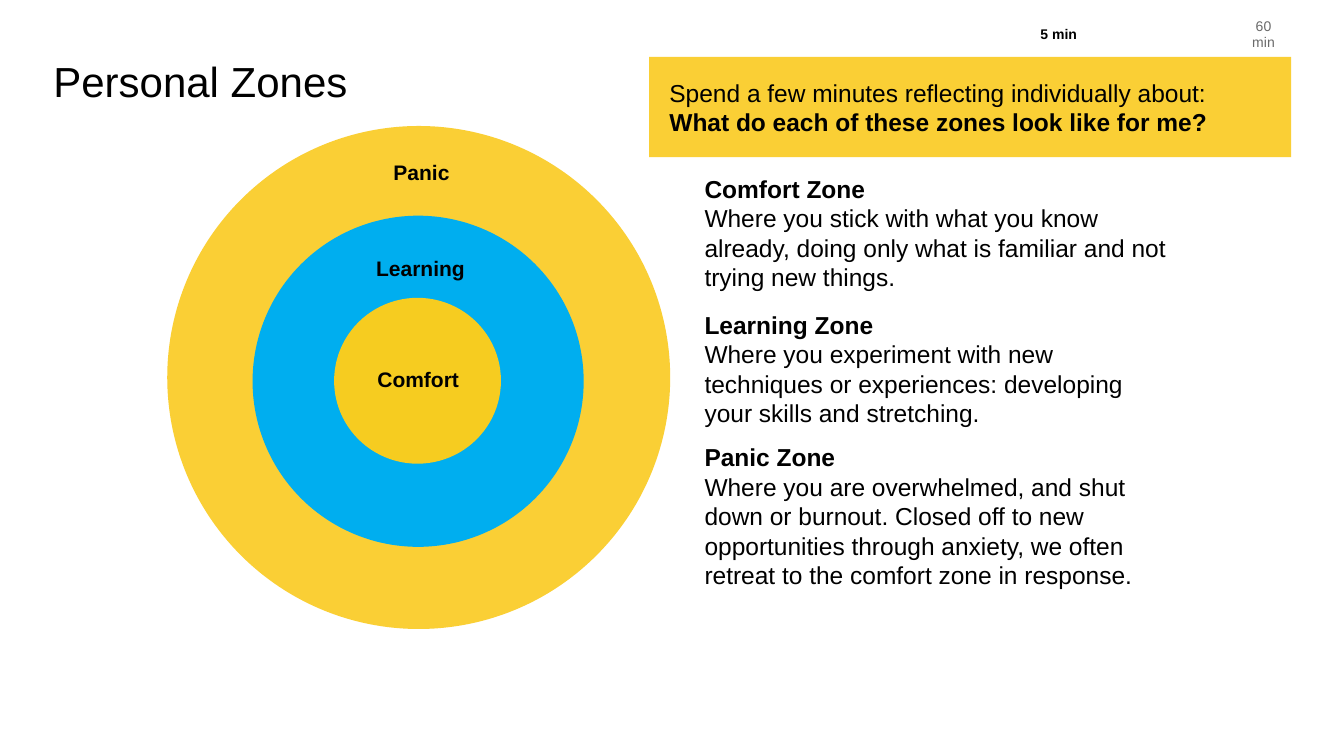
"""Build the Personal Zones slide with its nested circles and zone descriptions."""
from dataclasses import dataclass

from pptx import Presentation
from pptx.dml.color import RGBColor
from pptx.enum.shapes import MSO_SHAPE
from pptx.enum.text import MSO_ANCHOR, PP_ALIGN
from pptx.util import Cm, Pt

LEFT, CENTER = PP_ALIGN.LEFT, PP_ALIGN.CENTER
TOP, MIDDLE = MSO_ANCHOR.TOP, MSO_ANCHOR.MIDDLE
OVAL, RECTANGLE = MSO_SHAPE.OVAL, MSO_SHAPE.RECTANGLE


@dataclass(frozen=True)
class Theme:
    font: str = "Arial"
    ink: str = "000000"
    muted: str = "6A6A6A"
    yellow: str = "FACF35"
    blue: str = "00AEEF"
    gold: str = "F6CC20"
    title: int = 60
    body: int = 35
    label: int = 30
    timer: int = 20


class SlideBuilder:
    def __init__(self, slide, theme):
        self.slide = slide
        self.theme = theme

    def fill_frame(self, frame, lines, size, color=None, align=LEFT, anchor=MIDDLE, inset=0.15, wrap=True):
        frame_format = {"word_wrap": wrap, "vertical_anchor": anchor}
        frame_format.update({f"margin_{side}": Cm(inset) for side in ("left", "top", "right", "bottom")})
        for attribute, value in frame_format.items():
            setattr(frame, attribute, value)
        for index, (words, bold) in enumerate(lines):
            paragraph = frame.paragraphs[0] if index == 0 else frame.add_paragraph()
            paragraph.alignment = align
            run = paragraph.add_run()
            run.text = words
            for attribute, value in {"name": self.theme.font, "size": Pt(size), "bold": bold}.items():
                setattr(run.font, attribute, value)
            run.font.color.rgb = RGBColor.from_string(color or self.theme.ink)

    def text(self, box, lines, size, **style):
        area = self.slide.shapes.add_textbox(*map(Cm, box))
        self.fill_frame(area.text_frame, lines, size, **style)

    def block(self, kind, box, fill):
        shape = self.slide.shapes.add_shape(kind, *map(Cm, box))
        shape.shadow.inherit = False
        shape.fill.solid()
        shape.fill.fore_color.rgb = RGBColor.from_string(fill)
        shape.line.fill.background()
        return shape

    def banner(self, box, lines):
        shape = self.block(RECTANGLE, box, self.theme.yellow)
        self.fill_frame(shape.text_frame, lines, self.theme.body, inset=1.02)


def main():
    theme = Theme()
    deck = Presentation()
    deck.slide_width, deck.slide_height = Cm(67.74), Cm(38.1)
    builder = SlideBuilder(deck.slides.add_slide(deck.slide_layouts[6]), theme)

    builder.text((62.48, 1.14, 2.41, 1.14), [("60 min", False)], theme.timer,
                 color=theme.muted, align=CENTER, wrap=False)
    builder.text((51.89, 1.14, 2.95, 1.14), [("5 min", True)], theme.timer, align=CENTER)
    builder.text((2.69, 2.82, 62.38, 2.69), [("Personal Zones", False)], theme.title, anchor=TOP, inset=0)

    rings = [
        (8.43, 6.35, 25.35, 25.35, theme.yellow),
        (12.73, 10.87, 16.69, 16.69, theme.blue),
        (16.84, 15.01, 8.41, 8.36, theme.gold),
    ]
    for *box, fill in rings:
        builder.block(OVAL, box, fill)

    ring_labels = [
        ("Panic", 16.56, 7.9, CENTER),
        ("Learning", 16.51, 12.75, CENTER),
        ("Comfort", 18.87, 18.34, LEFT),
    ]
    for label, left, top, align in ring_labels:
        builder.text((left, top, 9.37, 1.57), [(label, True)], theme.label, align=align)

    zones = [
        ("Comfort Zone", 8.59, 6.27,
         "Where you stick with what you know already, doing only what is familiar "
         "and not trying new things."),
        ("Learning Zone", 15.44, 6.27,
         "Where you experiment with new techniques or experiences: developing "
         "your skills and stretching."),
        ("Panic Zone", 22.12, 7.77,
         "Where you are overwhelmed, and shut down or burnout. Closed off to new "
         "opportunities through anxiety, we often retreat to the comfort zone in response."),
    ]
    for heading, top, height, description in zones:
        builder.text((35.36, top, 24.03, height), [(heading, True), (description, False)], theme.body)

    builder.banner((32.72, 2.87, 32.36, 5.05), [
        ("Spend a few minutes reflecting individually about:", False),
        ("What do each of these zones look like for me?", True),
    ])
    deck.save("out.pptx")


if __name__ == "__main__":
    main()
